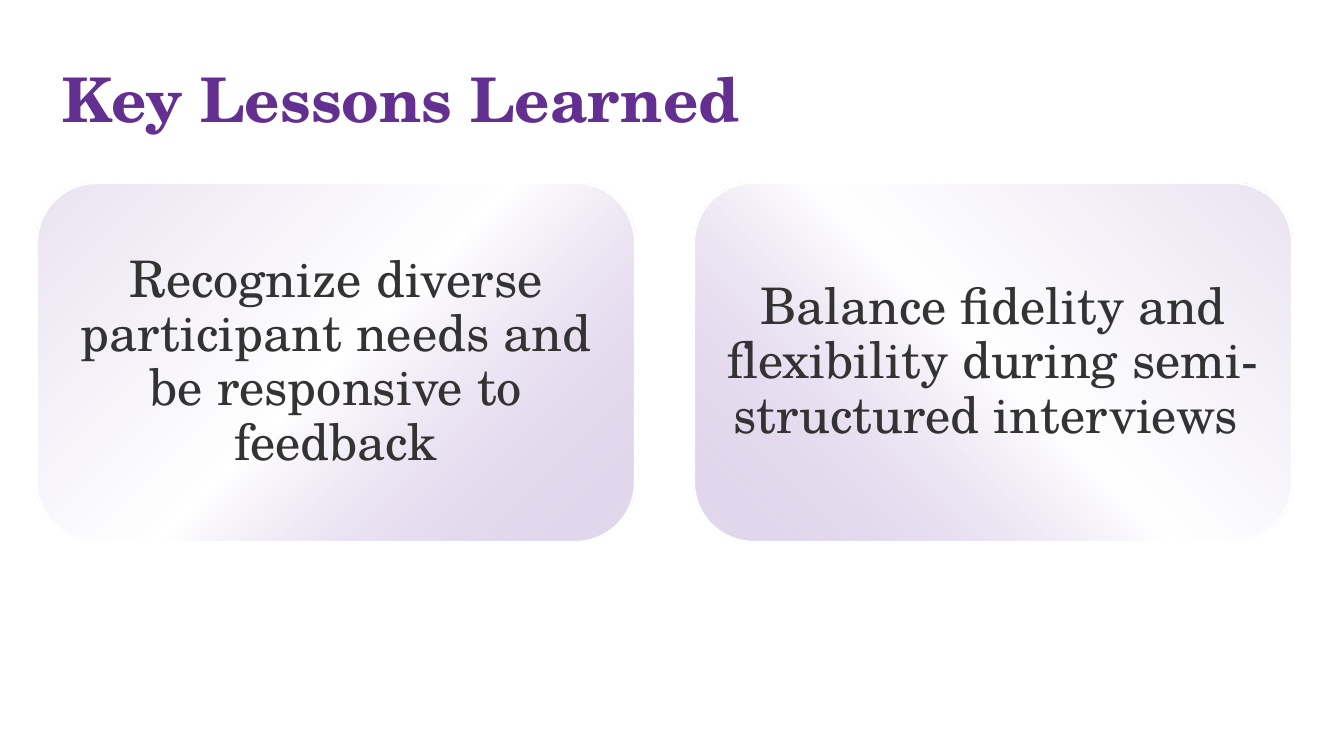
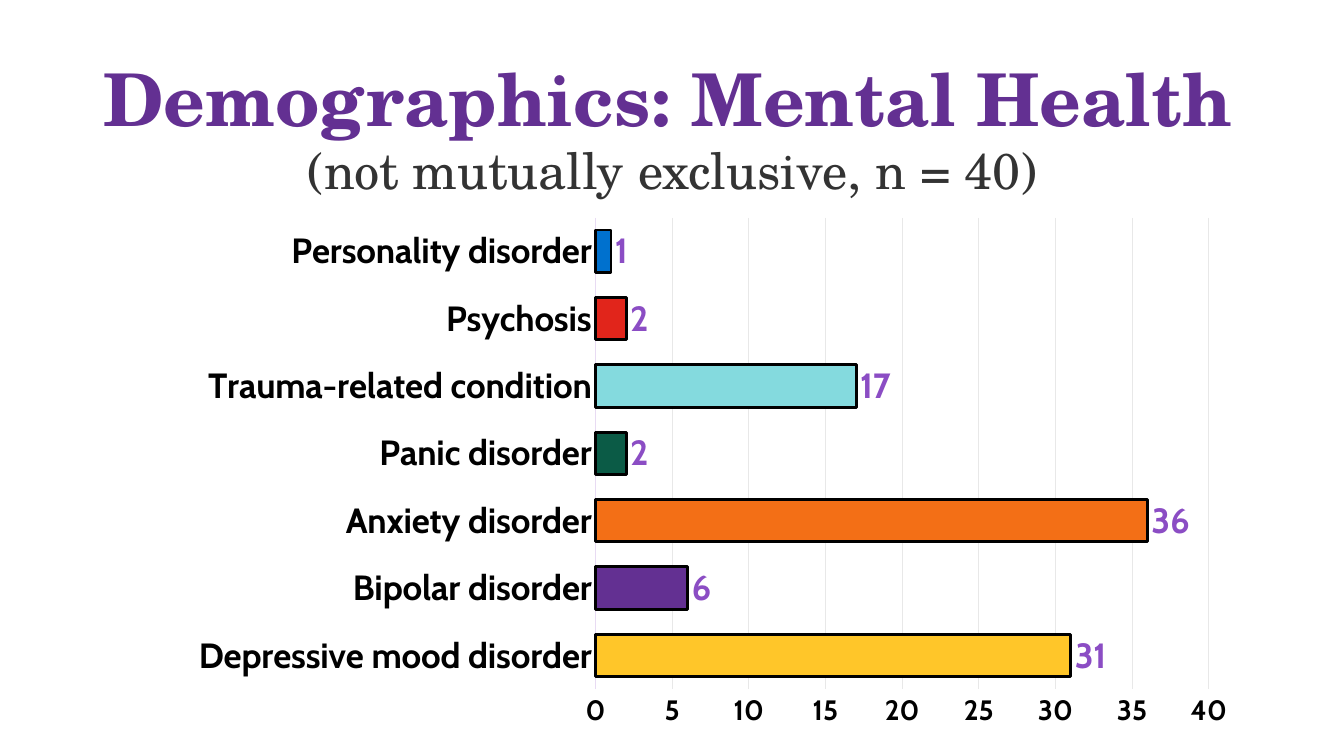
from pptx import Presentation
from pptx.chart.data import CategoryChartData
from pptx.dml.color import RGBColor
from pptx.enum.chart import XL_CHART_TYPE, XL_LABEL_POSITION, XL_TICK_MARK
from pptx.enum.shapes import MSO_SHAPE
from pptx.enum.text import MSO_ANCHOR, MSO_AUTO_SIZE, PP_ALIGN
from pptx.oxml import parse_xml
from pptx.oxml.ns import nsdecls, qn
from pptx.util import Pt

BAR = XL_CHART_TYPE.BAR_CLUSTERED
OUTSIDE_END = XL_LABEL_POSITION.OUTSIDE_END
NO_TICK = XL_TICK_MARK.NONE
ROUNDED = MSO_SHAPE.ROUNDED_RECTANGLE
MIDDLE = MSO_ANCHOR.MIDDLE
NO_FIT = MSO_AUTO_SIZE.NONE
LEFT, CENTER = PP_ALIGN.LEFT, PP_ALIGN.CENTER

SCALE = 914400 / 100.8
SLIDE_W, SLIDE_H = 1344, 756
SERIF, SANS = "TeX Gyre Schola", "Cabin"
TITLE_ONLY = 5
COLORS = {
    "title": "633092", "text": "333333", "white": "FFFFFF", "black": "000000",
    "lavender": "B9A1D4", "pale": "E9E3F1", "axis": "E8DBF3", "grid": "E8E8E8",
    "label": "8B4DC4", "series": "8258A7", "yellow": "FFC629", "purple": "633092",
    "orange": "F36F16", "green": "0B5B46", "aqua": "84DADE", "red": "E1251B",
    "blue": "0071CE",
}
LESSONS = [
    ("Recognize diverse participant needs and be responsive to feedback", 100),
    ("Balance fidelity and flexibility during semi-structured interviews ", 0),
]
CONDITIONS = [
    ("Depressive mood disorder", 31, "yellow"),
    ("Bipolar disorder", 6, "purple"),
    ("Anxiety disorder", 36, "orange"),
    ("Panic disorder", 2, "green"),
    ("Trauma-related condition", 17, "aqua"),
    ("Psychosis", 2, "red"),
    ("Personality disorder", 1, "blue"),
]


def px(n):
    """Turn pixels into EMU."""
    return round(n * SCALE)


def rgb(name):
    """Look up a colour by name."""
    return RGBColor.from_string(COLORS[name])


def style_font(font, size, color, name=SERIF, bold=False):
    """Set the face, size, colour and weight of a font."""
    font.name, font.size, font.bold = name, Pt(size), bold
    font.color.rgb = rgb(color)


def style_line(line, color, width):
    """Set a solid line."""
    line.color.rgb = rgb(color)
    line.width = Pt(width)


def write_text(sp, text, size, color="text", bold=False, align=CENTER, inset=None):
    """Write one formatted paragraph into a shape."""
    tf = sp.text_frame
    tf.word_wrap, tf.auto_size, tf.vertical_anchor = True, NO_FIT, MIDDLE
    if inset is not None:
        tf.margin_left = tf.margin_right = px(inset)
        tf.margin_top = tf.margin_bottom = px(inset)
    p = tf.paragraphs[0]
    p.alignment, p.line_spacing = align, 0.9
    r = p.add_run()
    r.text = text
    style_font(r.font, size, color, bold=bold)


def add_titled_slide(prs, text, size, box):
    """Add a title-only slide with its title in the given box."""
    s = prs.slides.add_slide(prs.slide_layouts[TITLE_ONLY])
    sp = s.shapes.title
    sp.left, sp.top, sp.width, sp.height = map(px, box)
    write_text(sp, text, size, color="title", bold=True, align=LEFT)
    return s


def fill_gradient(sp, focus_x):
    """Fill a shape with a gradient that starts at a bottom corner."""
    sp.fill.background()
    props = sp._element.spPr
    gradient = parse_xml(
        f'<a:gradFill {nsdecls("a")} rotWithShape="1"><a:gsLst>'
        f'<a:gs pos="0"><a:srgbClr val="{COLORS["lavender"]}">'
        f'<a:alpha val="40000"/></a:srgbClr></a:gs>'
        f'<a:gs pos="50000"><a:srgbClr val="{COLORS["white"]}"/></a:gs>'
        f'<a:gs pos="100000"><a:srgbClr val="{COLORS["pale"]}"/></a:gs>'
        f'</a:gsLst><a:path path="circle"><a:fillToRect l="{focus_x * 1000}" '
        f't="100000" r="{(100 - focus_x) * 1000}" b="0"/></a:path></a:gradFill>')
    props.replace(props.find(qn("a:noFill")), gradient)


def add_cards(s, x, y, w, h, gap):
    """Place the lesson cards side by side in a box."""
    card_w = (w - gap * (len(LESSONS) - 1)) / len(LESSONS)
    for i, (text, focus_x) in enumerate(LESSONS):
        left = x + i * (card_w + gap)
        sp = s.shapes.add_shape(ROUNDED, px(left), px(y), px(card_w), px(h))
        sp.shadow.inherit = False
        fill_gradient(sp, focus_x)
        style_line(sp.line, "white", 1.5)
        write_text(sp, text, 36, inset=15)


def style_axes(chart):
    """Format the category and value axes."""
    cat, val = chart.category_axis, chart.value_axis
    for axis, size in ((cat, 25), (val, 20)):
        axis.major_tick_mark = axis.minor_tick_mark = NO_TICK
        style_font(axis.tick_labels.font, size, "black", SANS, True)
    style_line(cat.format.line, "axis", 0.75)
    val.minimum_scale, val.maximum_scale, val.major_unit = 0, 40, 5
    val.format.line.fill.background()
    val.has_major_gridlines = True
    style_line(val.major_gridlines.format.line, "grid", 0.75)


def style_bars(plot):
    """Colour each bar and show its value."""
    plot.gap_width, plot.vary_by_categories = 59, False
    series = plot.series[0]
    series.format.fill.solid()
    series.format.fill.fore_color.rgb = rgb("series")
    for i, (_, _, color) in enumerate(CONDITIONS):
        bar = series.points[i].format
        bar.fill.solid()
        bar.fill.fore_color.rgb = rgb(color)
        style_line(bar.line, "black", 2)
    labels = series.data_labels
    labels.show_value, labels.position = True, OUTSIDE_END
    style_font(labels.font, 25, "label", SANS, True)


def set_plot_box(chart, x, y, w, h):
    """Fix the inner plot area as fractions of the chart."""
    area = chart._chartSpace.chart.plotArea
    for old in area.findall(qn("c:layout")):
        area.remove(old)
    area.insert(0, parse_xml(
        f'<c:layout {nsdecls("c")}><c:manualLayout><c:layoutTarget val="inner"/>'
        f'<c:xMode val="edge"/><c:yMode val="edge"/><c:x val="{x}"/><c:y val="{y}"/>'
        f'<c:w val="{w}"/><c:h val="{h}"/></c:manualLayout></c:layout>'))


def add_condition_chart(s, x, y, w, h):
    """Place the bar chart of conditions in a box."""
    data = CategoryChartData()
    data.categories = [name for name, _, _ in CONDITIONS]
    data.add_series("Series 1", [value for _, value, _ in CONDITIONS])
    chart = s.shapes.add_chart(BAR, px(x), px(y), px(w), px(h), data).chart
    chart.has_legend = chart.has_title = False
    style_font(chart.font, 10, "title")
    style_axes(chart)
    style_bars(chart.plots[0])
    set_plot_box(chart, 0.39, 0.02, 0.57, 0.89)


def build_lessons(prs):
    """Build the slide of lessons."""
    s = add_titled_slide(prs, "Key Lessons Learned", 44, (52, 30, 1159, 146))
    add_cards(s, 37, 183, 1255, 359, gap=59)


def build_demographics(prs):
    """Build the slide of mental health demographics."""
    s = add_titled_slide(prs, "Demographics: Mental Health", 52, (93, 20, 1159, 166))
    sp = s.shapes.add_textbox(px(93), px(121), px(1159), px(104))
    write_text(sp, "(not mutually exclusive, n = 40)", 36)
    add_condition_chart(s, 176, 207, 1076, 530)


def main():
    """Build and save the presentation."""
    prs = Presentation()
    prs.slide_width, prs.slide_height = px(SLIDE_W), px(SLIDE_H)
    build_lessons(prs)
    build_demographics(prs)
    prs.save("out.pptx")


if __name__ == "__main__":
    main()
